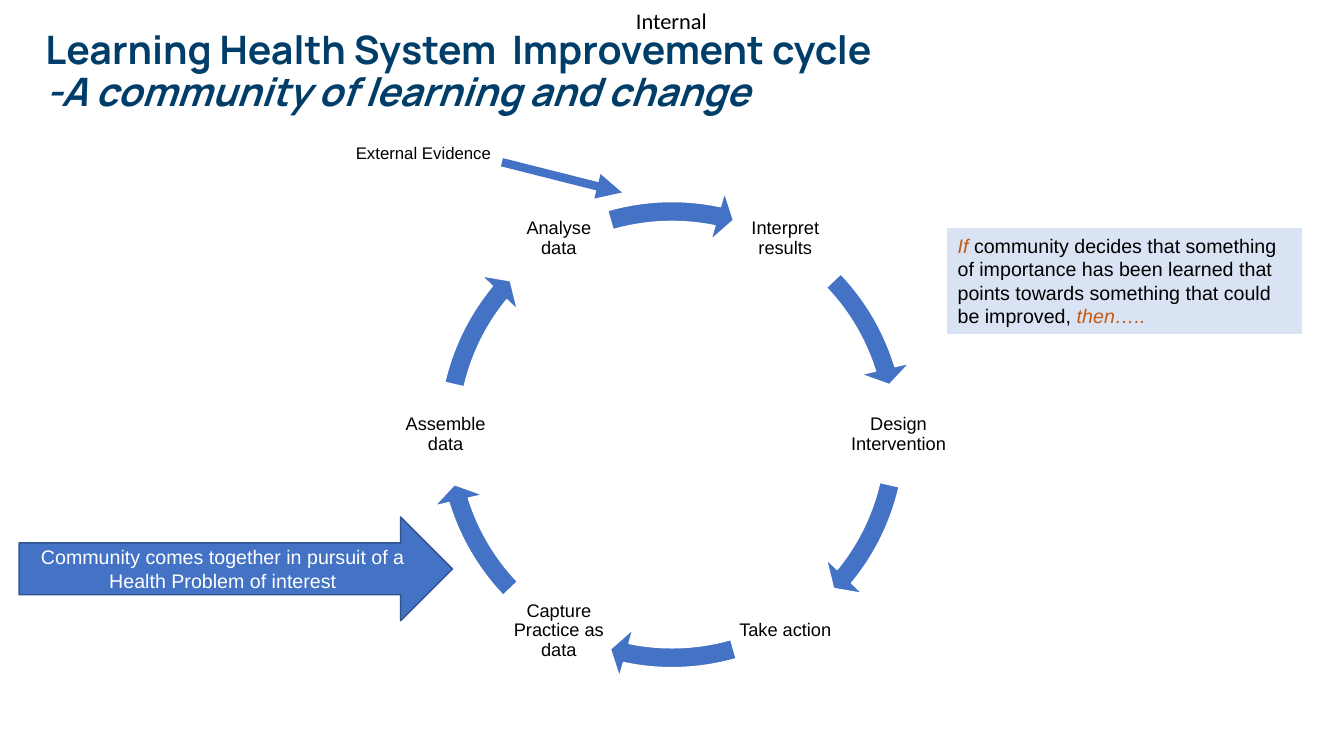
from math import cos, radians, sin

from lxml import etree
from pptx import Presentation
from pptx import util as u
from pptx.dml.color import RGBColor
from pptx.enum import shapes, text
from pptx.oxml import ns

COLS = 40
HUES = {"navy": "003D69", "blue": "4472C4", "edge": "325491", "pale": "DAE3F3",
        "rust": "C55A11", "black": "000000", "white": "FFFFFF"}
FORM = shapes.MSO_SHAPE
MID = text.MSO_ANCHOR.MIDDLE
CENTRE = text.PP_ALIGN.CENTER


def rgb(name):
    return RGBColor.from_string(HUES[name])


class Board:
    """Style and current slide; all lengths are in square grid cells."""

    def __init__(self, deck):
        self.slide = deck.slides.add_slide(deck.slide_layouts[6])
        self.items = self.slide.shapes
        self.cell = deck.slide_width / COLS

    def place(self, *spans):
        return [u.Emu(round(span * self.cell)) for span in spans]

    def letter(self, shape, lines, size, hue="black", face="Arial", pad=(0.3, 0.15),
               align=None, anchor=None, wrap=True, space=None, bold=None):
        """Each line is a list of (words, hue, italic) runs."""
        frame = shape.text_frame
        frame.word_wrap = wrap
        frame.vertical_anchor = anchor or text.MSO_ANCHOR.TOP
        side, top = self.place(*pad)
        frame.margin_left = frame.margin_right = side
        frame.margin_top = frame.margin_bottom = top
        para = frame.paragraphs[0]
        para.alignment = align or text.PP_ALIGN.LEFT
        para.line_spacing = space
        font = para.font
        font.name, font.size, font.bold = face, u.Pt(size), bold
        font.color.rgb = rgb(hue)
        for row, line in enumerate(lines):
            if row:
                para.add_line_break()
            for words, tint, slant in line:
                run = para.add_run()
                run.text = words
                if slant:
                    run.font.italic = True
                if tint != hue or shape.shape_type != shapes.MSO_SHAPE_TYPE.TEXT_BOX:
                    run.font.color.rgb = rgb(tint)

    def label(self, box, words, size, **style):
        shape = self.items.add_textbox(*self.place(*box))
        self.letter(shape, [[(words, "black", False)]], size, **style)

    def title(self, box, plain, slant):
        shape = self.items.add_textbox(*self.place(*box))
        lines = [[(plain, "navy", False)], [(slant, "navy", True)]]
        self.letter(shape, lines, 28, "navy", "Manrope", (0, 0.12), space=0.9, bold=True)

    def shape(self, form, box, fill, edge, width=1):
        shape = self.items.add_shape(form, *self.place(*box))
        shape.shadow.inherit = False
        shape.fill.solid()
        shape.fill.fore_color.rgb = rgb(fill)
        shape.line.color.rgb = rgb(edge)
        shape.line.width = u.Pt(width)
        return shape

    def arc(self, box, start, end):
        """Curved arrow between two angles, clockwise from the right."""
        shape = self.shape(FORM.CIRCULAR_ARROW, box, "blue", "white")
        for spot, value in enumerate((0.04, 2.51, end * 0.6, start * 0.6, 0.05)):
            shape.adjustments[spot] = value

    def arrow(self, ends, hue, width):
        link = self.items.add_connector(shapes.MSO_CONNECTOR.STRAIGHT, *self.place(*ends))
        link.line.color.rgb = rgb(hue)
        link.line.width = u.Pt(width)
        props = link.element.spPr
        etree.SubElement(props.find(ns.qn("a:ln")), ns.qn("a:tailEnd"), type="triangle")
        etree.SubElement(props, ns.qn("a:effectLst"))


def main():
    deck = Presentation()
    deck.slide_width, deck.slide_height = u.Inches(13.33), u.Inches(7.5)
    board = Board(deck)

    # Heading
    board.label((18.93, 0.21, 2.28, 0.81), "Internal", 16, face="Calibri",
                pad=(0, 0), wrap=False)
    board.title((1.35, 0.78, 35.28, 2.79), "Learning Health System  Improvement cycle",
                "-A community of learning and change")

    # Cycle: six steps spaced evenly, each followed by an arrow
    mid, row, reach, side, ring = 20, 12.94, 6.74, 3.03, 14.76
    steps = ("Interpret results", "Design Intervention", "Take action",
             "Capture Practice as data", "Assemble data", "Analyse data")
    spans = ((12.96, 39.42), (73.99, 101.83), (136.4, 162.86))
    circle = (mid - ring / 2, row - ring / 2, ring, ring)
    for step, words in enumerate(steps):
        turn = radians(60 * step - 60)
        left = mid + reach * cos(turn) - side / 2
        top = row + reach * sin(turn) - side / 2
        board.label((left, top, side, side), words, 13, pad=(0.06, 0.06),
                    align=CENTRE, anchor=MID, space=0.9)
        half, spot = divmod(step, 3)
        start, end = (angle + 180 * half for angle in spans[spot])
        board.arc(circle, start, end)

    # Ways into the cycle
    entry = board.shape(FORM.RIGHT_ARROW, (0.57, 15.39, 12.9, 3.09), "blue", "edge")
    board.letter(entry, [[("Community comes together in pursuit of a Health Problem of interest",
                           "white", False)]], 14, "white", align=CENTRE, anchor=MID)
    board.label((10.29, 4.11, 4.65, 0.9), "External Evidence", 12, wrap=False)
    board.arrow((14.94, 4.83, 18.51, 5.73), "blue", 6)

    # Decision note
    note = board.shape(FORM.RECTANGLE, (28.2, 6.81, 10.53, 3.12), "pale", "pale", 0.75)
    board.letter(note, [[("If ", "rust", True),
                         ("community decides that something of importance has been learned "
                          "that points towards something that could be improved, ",
                          "black", False),
                         ("then…..", "rust", True)]], 14)

    deck.save("out.pptx")


if __name__ == "__main__":
    main()
